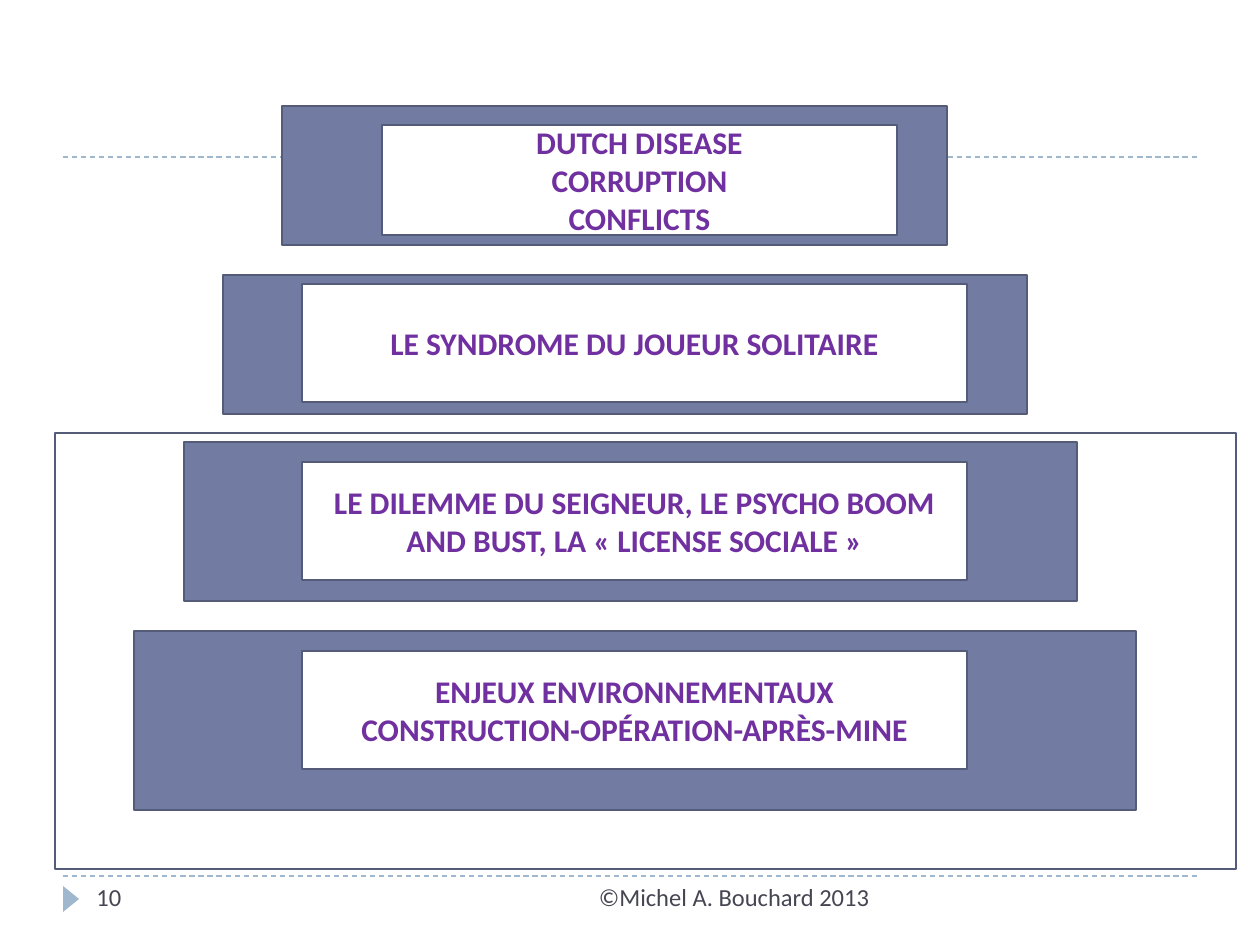
import dataclasses

import pptx
import pptx.dml.color
import pptx.enum.dml
import pptx.enum.shapes
import pptx.enum.text
import pptx.oxml.ns
import pptx.shapes.autoshape
import pptx.slide
import pptx.util
from lxml import etree

EMU_PER_PX = 914400 / 126
WHITE = pptx.dml.color.RGBColor(0xFF, 0xFF, 0xFF)
SLATE = pptx.dml.color.RGBColor(0x72, 0x7C, 0xA3)
OUTLINE = pptx.dml.color.RGBColor(0x54, 0x5C, 0x79)
PURPLE = pptx.dml.color.RGBColor(0x70, 0x30, 0xA0)
PALE_BLUE = pptx.dml.color.RGBColor(0x9F, 0xB8, 0xCD)
FOOTER_GREY = pptx.dml.color.RGBColor(0x46, 0x46, 0x53)
Align = pptx.enum.text.PP_ALIGN
Anchor = pptx.enum.text.MSO_ANCHOR
ShapeKind = pptx.enum.shapes.MSO_SHAPE


@dataclasses.dataclass(frozen=True)
class Box:
    left: int
    top: int
    width: int
    height: int


@dataclasses.dataclass(frozen=True)
class Step:
    band: Box
    label: Box
    lines: tuple[str, ...]


FRAME = Box(55, 433, 1181, 436)
STEPS = (
    Step(Box(282, 106, 665, 139), Box(382, 125, 515, 110),
         ("DUTCH DISEASE", "CORRUPTION", "CONFLICTS")),
    Step(Box(223, 275, 804, 139), Box(302, 284, 665, 118),
         ("LE SYNDROME DU JOUEUR SOLITAIRE",)),
    Step(Box(184, 442, 893, 159), Box(302, 462, 665, 118),
         ("LE DILEMME DU SEIGNEUR, LE PSYCHO BOOM AND BUST, LA « LICENSE SOCIALE »",)),
    Step(Box(134, 631, 1002, 179), Box(302, 651, 665, 118),
         ("ENJEUX ENVIRONNEMENTAUX", "CONSTRUCTION-OPÉRATION-APRÈS-MINE")),
)


def px(length: int) -> pptx.util.Emu:
    return pptx.util.Emu(round(length * EMU_PER_PX))


def place(box: Box) -> tuple[pptx.util.Emu, ...]:
    return tuple(px(length) for length in dataclasses.astuple(box))


def write_text(shape: pptx.shapes.autoshape.Shape, lines: tuple[str, ...], *,
               size: int, color: pptx.dml.color.RGBColor, bold: bool = False,
               align: Align = Align.LEFT, anchor: Anchor = Anchor.TOP) -> None:
    frame = shape.text_frame
    frame.word_wrap = True
    frame.vertical_anchor = anchor
    for index, line in enumerate(lines):
        para = frame.add_paragraph() if index else frame.paragraphs[0]
        para.alignment = align
        span = para.add_run()
        span.text = line
        span.font.name = "Calibri"
        span.font.size = pptx.util.Pt(size)
        span.font.bold = bold
        span.font.color.rgb = color


def draw_shape(page: pptx.slide.Slide, box: Box, fill: pptx.dml.color.RGBColor, *,
               kind: ShapeKind = ShapeKind.RECTANGLE,
               outlined: bool = True) -> pptx.shapes.autoshape.Shape:
    shape = page.shapes.add_shape(kind, *place(box))
    shape.shadow.inherit = False
    shape.fill.solid()
    shape.fill.fore_color.rgb = fill
    if outlined:
        shape.line.color.rgb = OUTLINE
        shape.line.width = pptx.util.Pt(1.5)
    else:
        shape.line.fill.background()
    return shape


def draw_rule(page: pptx.slide.Slide, top: int) -> None:
    rule = page.shapes.add_connector(
        pptx.enum.shapes.MSO_CONNECTOR.STRAIGHT, px(63), px(top), px(1197), px(top))
    rule.line.color.rgb = PALE_BLUE
    rule.line.width = pptx.util.Pt(0.75)
    rule.line.dash_style = pptx.enum.dml.MSO_LINE.DASH
    properties = rule._element.find(pptx.oxml.ns.qn("p:spPr"))
    etree.SubElement(properties, pptx.oxml.ns.qn("a:effectLst"))


def draw_footer(page: pptx.slide.Slide, box: Box, text: str, align: Align) -> None:
    footer = page.shapes.add_textbox(*place(box))
    write_text(footer, (text,), size=14, color=FOOTER_GREY, align=align)


def main() -> None:
    deck = pptx.Presentation()
    deck.slide_width, deck.slide_height = px(1260), px(945)
    page = deck.slides.add_slide(deck.slide_layouts[6])

    for top in (876, 157):
        draw_rule(page, top)
    marker = draw_shape(page, Box(58, 891, 26, 16), PALE_BLUE,
                        kind=ShapeKind.ISOSCELES_TRIANGLE, outlined=False)
    marker.rotation = 90

    draw_shape(page, FRAME, WHITE)
    for step in STEPS:
        draw_shape(page, step.band, SLATE)
    for step in STEPS:
        label = draw_shape(page, step.label, WHITE)
        write_text(label, step.lines, size=18, color=PURPLE, bold=True,
                   align=Align.CENTER, anchor=Anchor.MIDDLE)

    draw_footer(page, Box(84, 876, 273, 50), "10", Align.LEFT)
    draw_footer(page, Box(399, 876, 483, 50), "©Michel A. Bouchard 2013", Align.RIGHT)
    deck.save("out.pptx")


if __name__ == "__main__":
    main()
